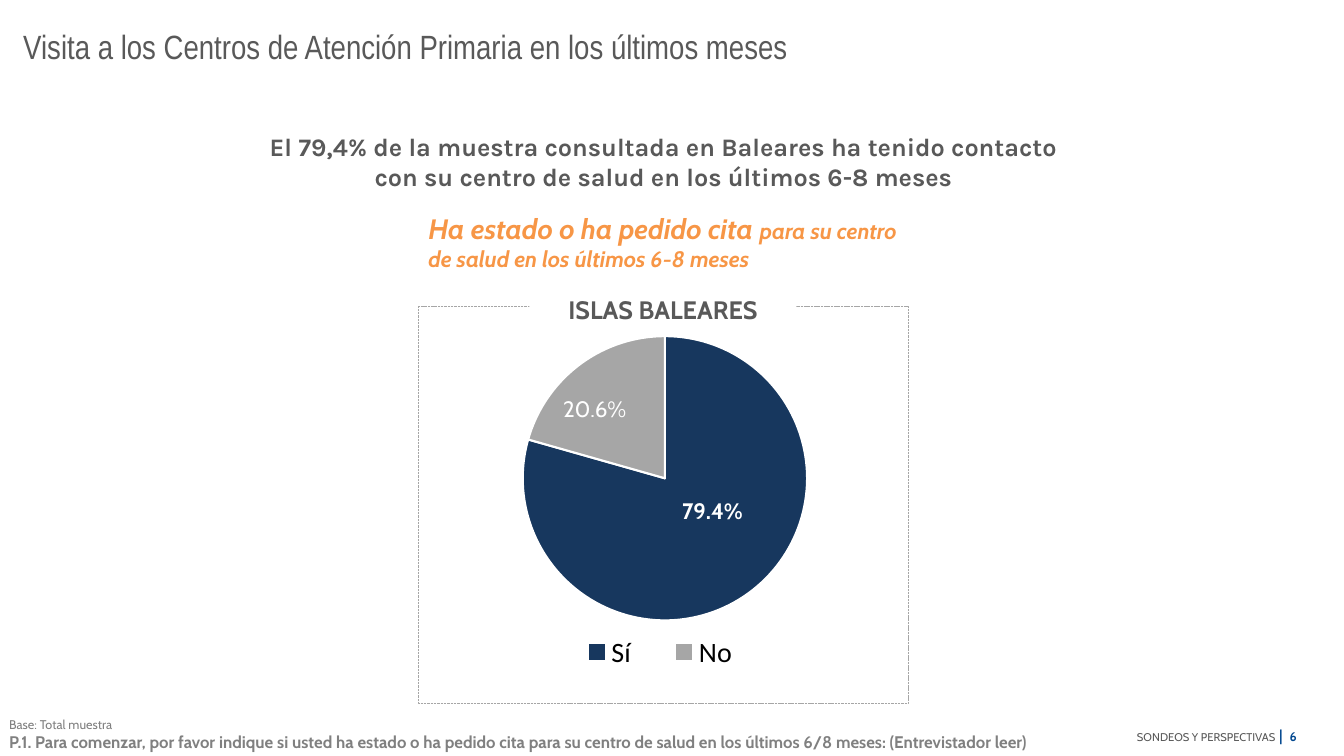
from pptx import Presentation
from pptx.chart.data import CategoryChartData
from pptx.dml.color import RGBColor
from pptx.enum.chart import XL_CHART_TYPE, XL_LABEL_POSITION, XL_LEGEND_POSITION
from pptx.enum.dml import MSO_LINE
from pptx.enum.shapes import MSO_SHAPE
from pptx.enum.text import MSO_ANCHOR, PP_ALIGN
from pptx.oxml import parse_xml
from pptx.oxml.ns import nsdecls
from pptx.util import Inches, Pt

PIE = XL_CHART_TYPE.PIE
LABEL_CENTER = XL_LABEL_POSITION.CENTER
LEGEND_BOTTOM = XL_LEGEND_POSITION.BOTTOM
DASH = MSO_LINE.SQUARE_DOT
RECTANGLE = MSO_SHAPE.RECTANGLE
TOP, MIDDLE, BOTTOM = MSO_ANCHOR.TOP, MSO_ANCHOR.MIDDLE, MSO_ANCHOR.BOTTOM
LEFT, CENTER, RIGHT = PP_ALIGN.LEFT, PP_ALIGN.CENTER, PP_ALIGN.RIGHT

COLORS = {"text": "595959", "note": "808080", "accent": "F79646", "link": "00478F",
          "yes": "17375E", "no": "A6A6A6", "white": "FFFFFF", "black": "000000"}
PERCENT = '0.0"%"'


def color(name):
    return RGBColor.from_string(COLORS[name])


def set_font(font, **values):
    """Apply font values; sizes are in points, colours are palette names."""
    for key, value in values.items():
        if key == "color":
            font.color.rgb = color(value)
        else:
            setattr(font, key, Pt(value) if key == "size" else value)


def write(shape, paragraphs, align=LEFT, anchor=TOP, wrap=True, after=0):
    """Fill a shape with paragraphs, each a list of (text, font values)."""
    frame = shape.text_frame
    frame.word_wrap = wrap
    frame.vertical_anchor = anchor
    for index, spans in enumerate(paragraphs):
        para = frame.paragraphs[0] if index == 0 else frame.add_paragraph()
        para.alignment = align
        para.space_after = Pt(after)
        for text, values in spans:
            span = para.add_run()
            span.text = text
            set_font(span.font, **values)
    return frame


def add_panel(page, box, fill=None, line=None):
    panel = page.shapes.add_shape(RECTANGLE, *map(Inches, box))
    panel.shadow.inherit = False
    if fill:
        panel.fill.solid()
        panel.fill.fore_color.rgb = color(fill)
    else:
        panel.fill.background()
    if line:
        panel.line.color.rgb = color(line)
        panel.line.width = Pt(0.25)
        panel.line.dash_style = DASH
    else:
        panel.line.fill.background()
    return panel


def add_title(page, box):
    title = page.shapes.title
    title.left, title.top, title.width, title.height = map(Inches, box)
    write(title, [[("Visita a los Centros de Atención Primaria en los últimos meses",
                    dict(name="Arial Narrow", size=24, color="text"))]])


def add_headline(page, box):
    headline = page.shapes.add_textbox(*map(Inches, box))
    write(headline, [[("El 79,4% de la muestra consultada en Baleares ha tenido contacto "
                       "con su centro de salud en los últimos 6-8 meses",
                       dict(name="Karla", size=18, bold=True, color="text"))]],
          align=CENTER, anchor=MIDDLE, after=6)


def add_question(page, box):
    style = dict(name="Cabin", bold=True, italic=True, color="accent")
    write(add_panel(page, box, fill="white"),
          [[("Ha estado o ha pedido cita ", dict(style, size=20)),
            ("para su centro de salud en los últimos 6-8 meses", dict(style, size=16))]],
          after=6)


def manual_layout(x, y, width=None, height=None, mode=""):
    """Chart layout in fractions of the chart; without mode it is an offset."""
    parts = [("xMode", mode), ("yMode", mode), ("x", x), ("y", y), ("w", width), ("h", height)]
    inner = "".join(f'<c:{tag} val="{value}"/>' for tag, value in parts if value not in ("", None))
    return parse_xml(f'<c:layout {nsdecls("c")}><c:manualLayout>{inner}'
                     '</c:manualLayout></c:layout>')


def add_pie(page, box):
    data = CategoryChartData(number_format="0.0")
    data.categories = ["Sí ", "No"]
    data.add_series("Visita", (79.4, 20.6))
    chart = page.shapes.add_chart(PIE, *map(Inches, box), data).chart
    chart.has_title = False
    set_font(chart.font, name="Calibri", size=10, color="black")

    # Legend and plot positions
    chart.has_legend = True
    legend = chart.legend
    legend.position = LEGEND_BOTTOM
    legend.include_in_layout = False
    set_font(legend.font, name="Calibri", size=20, color="black")
    chart_space = chart._chartSpace
    for old in chart_space.xpath(".//c:plotArea/c:layout"):
        old.getparent().remove(old)
    plot_area = chart_space.xpath(".//c:plotArea")[0]
    plot_area.insert(0, manual_layout(0.19, 0.07, 0.62, 0.72, mode="edge"))
    legend_position = chart_space.xpath(".//c:legend/c:legendPos")[0]
    legend_position.addnext(manual_layout(0.27, 0.81, 0.44, 0.12, mode="edge"))

    # Slices and their labels
    plot = chart.plots[0]
    plot.vary_by_categories = True
    slices = [("yes", True, (0.01, -0.06)), ("no", False, (-0.06, -0.03))]
    for index, (fill, bold, offset) in enumerate(slices):
        point = plot.series[0].points[index]
        point.format.fill.solid()
        point.format.fill.fore_color.rgb = color(fill)
        point.format.line.color.rgb = color("white")
        point.format.line.width = Pt(1.5)
        label = point.data_label
        set_font(label.font, name="Cabin", size=16, bold=bold, color="white")
        label.position = LABEL_CENTER
        element = chart_space.xpath(f".//c:dLbl[c:idx/@val='{index}']")[0]
        element.insert(1, manual_layout(*offset))
        number_format = parse_xml(f'<c:numFmt {nsdecls("c")} sourceLinked="0"/>')
        number_format.set("formatCode", PERCENT)
        element.insert(2, number_format)


def add_region(page, box):
    """Dashed frame with the pie inside and the region name over its top edge."""
    left, top, width, height = box
    add_panel(page, box, line="no")
    add_pie(page, (left + 0.17, top + 0.02, width - 0.31, height - 0.02))
    name = add_panel(page, (left + 1.1, top - 0.23, 2.65, 0.53), fill="white")
    write(name, [[("ISLAS BALEARES", dict(name="Cabin", size=18, bold=True, color="text"))]],
          align=CENTER, anchor=MIDDLE, after=6)


def add_base_note(page, box):
    style = dict(name="Cabin", color="note")
    note = page.shapes.add_textbox(*map(Inches, box))
    frame = write(note, [
        [("Base: Total muestra", dict(style, size=9))],
        [("P.1. Para comenzar, por favor indique si usted ha estado o ha pedido cita para su "
          "centro de salud en los últimos 6/8 meses: (Entrevistador leer)",
          dict(style, size=12, bold=True))]], anchor=BOTTOM)
    frame.margin_left = frame.margin_right = Inches(0.09)
    frame.margin_top = frame.margin_bottom = Inches(0.04)


def add_footer(page, box):
    style = dict(name="Cabin", color="text")
    number = dict(name="Cabin", color="link", bold=True)
    write(page.shapes.add_textbox(*map(Inches, box)),
          [[("SONDEOS Y PERSPECTIVAS", dict(style, size=8)), (" ", dict(style, size=11)),
            ("|  ", dict(number, size=11)), ("6", dict(number, size=9))]],
          align=RIGHT, anchor=MIDDLE, wrap=False)


def main():
    deck = Presentation()
    deck.slide_width, deck.slide_height = Inches(13.33), Inches(7.5)
    page = deck.slides.add_slide(deck.slide_layouts[5])
    add_footer(page, (11.05, 7.15, 1.91, 0.29))
    add_title(page, (0.13, 0.21, 10.64, 0.91))
    add_base_note(page, (0, 7.06, 10.32, 0.44))
    add_question(page, (4.15, 2.05, 4.86, 0.71))
    add_headline(page, (2.42, 1.18, 8.32, 0.85))
    add_region(page, (4.15, 3.04, 4.86, 3.94))
    deck.save("out.pptx")


if __name__ == "__main__":
    main()
